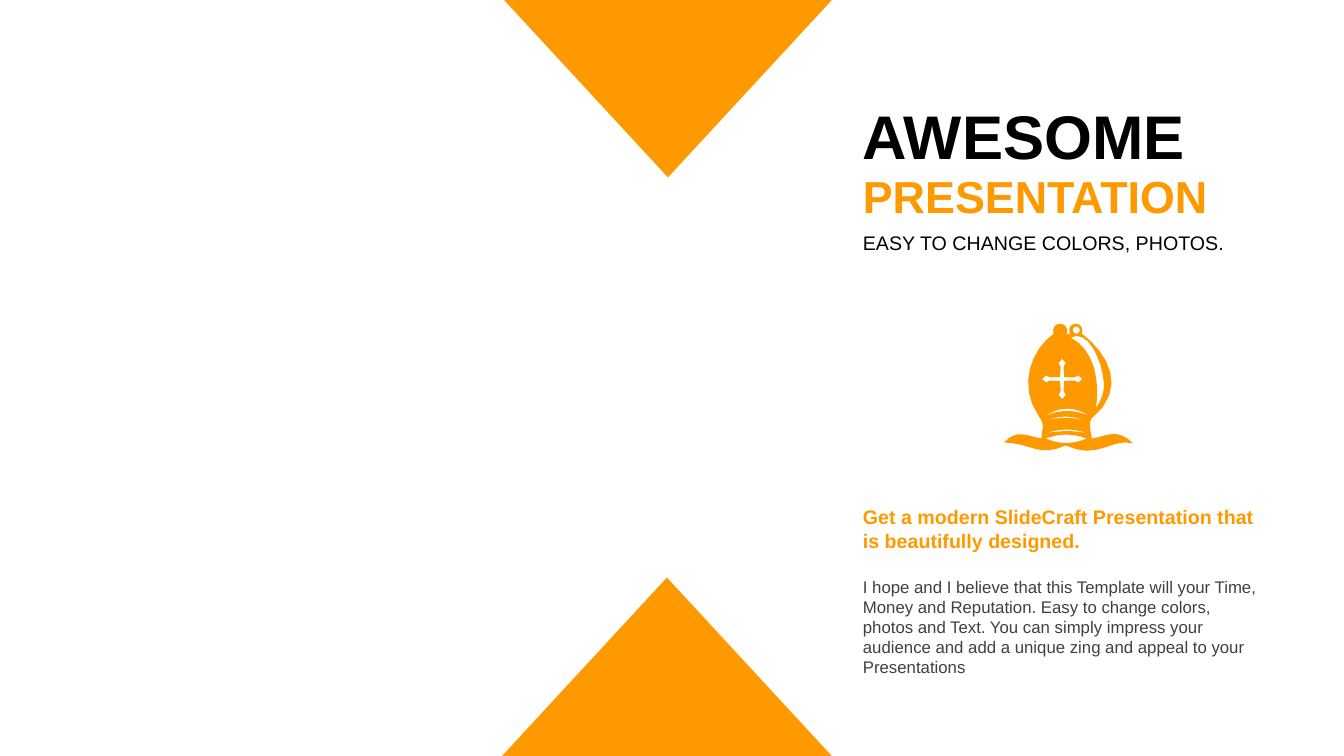
"""Build a cover slide with two triangles, a headline column and a mitre emblem."""
from math import cos, pi, sin

from pptx import Presentation
from pptx.dml.color import RGBColor
from pptx.enum.shapes import MSO_SHAPE
from pptx.enum.text import MSO_ANCHOR, MSO_AUTO_SIZE, PP_ALIGN
from pptx.util import Inches, Pt

TRIANGLE = MSO_SHAPE.ISOSCELES_TRIANGLE
TOP, MIDDLE = MSO_ANCHOR.TOP, MSO_ANCHOR.MIDDLE
LEFT, JUSTIFY = PP_ALIGN.LEFT, PP_ALIGN.JUSTIFY
FIT_SHAPE = MSO_AUTO_SIZE.SHAPE_TO_FIT_TEXT

THEME = {
    "font": "Arial",
    "accent": RGBColor(0xFE, 0x99, 0x00),
    "black": RGBColor(0x00, 0x00, 0x00),
    "grey": RGBColor(0x40, 0x40, 0x40),
    "headline": Pt(44),
    "subhead": Pt(32),
    "lead": Pt(14),
    "body": Pt(12),
}
CELL = Inches(0.01)
COLUMNS, ROWS = 1333, 750
TEXT_COLUMN, TEXT_WIDTH = 846, 428
TRIANGLE_WIDTH, TRIANGLE_HEIGHT = 327, 177
CURVE_STEPS = 8


def paint(shape):
    """Give a shape the flat accent fill."""
    shape.shadow.inherit = False
    shape.fill.solid()
    shape.fill.fore_color.rgb = THEME["accent"]
    shape.line.fill.background()


def trace(start, curves):
    """Turn a start point and its cubic curves into grid points."""
    points = [start]
    for curve in curves:
        corners = [points[-1], *curve]
        for step in range(1, CURVE_STEPS + 1):
            t = step / CURVE_STEPS
            weights = ((1 - t) ** 3, 3 * t * (1 - t) ** 2, 3 * t * t * (1 - t), t ** 3)
            points.append(tuple(
                sum(w * value for w, value in zip(weights, axis))
                for axis in zip(*corners)))
    return points


presentation = Presentation()
presentation.slide_width = COLUMNS * CELL
presentation.slide_height = ROWS * CELL
slide = presentation.slides.add_slide(presentation.slide_layouts[6])

TEXTS = [
    ("AWESOME", 92, TEXT_WIDTH, 84, "headline", "black", True, JUSTIFY, MIDDLE),
    ("PRESENTATION", 162, TEXT_WIDTH, 64, "subhead", "accent", True, JUSTIFY, MIDDLE),
    ("EASY TO CHANGE COLORS, PHOTOS.", 224, TEXT_WIDTH, 34,
     "lead", "black", False, JUSTIFY, TOP),
    ("Get a modern SlideCraft Presentation that is beautifully designed.",
     496, TEXT_WIDTH, 57, "lead", "accent", True, LEFT, TOP),
    ("I hope and I believe that this Template will your Time, Money and Reputation. "
     "Easy to change colors, photos and Text. You can simply impress your audience "
     "and add a unique zing and appeal to your Presentations",
     567, 419, 111, "body", "grey", False, LEFT, TOP),
]
for text, row, width, height, size, color, bold, alignment, anchor in TEXTS:
    text_box = slide.shapes.add_textbox(
        TEXT_COLUMN * CELL, row * CELL, width * CELL, height * CELL)
    text_frame = text_box.text_frame
    text_frame.text = text
    text_frame.word_wrap = True
    text_frame.auto_size = FIT_SHAPE
    text_frame.vertical_anchor = anchor
    paragraph = text_frame.paragraphs[0]
    paragraph.alignment = alignment
    font = paragraph.runs[0].font
    font.name, font.size, font.bold = THEME["font"], THEME[size], bold
    font.color.rgb = THEME[color]

for column, row, rotation, apex in (
    (498, ROWS - TRIANGLE_HEIGHT, 0, 0.5),
    (499, -1, 180, 0.5),
):
    triangle = slide.shapes.add_shape(
        TRIANGLE, column * CELL, row * CELL,
        TRIANGLE_WIDTH * CELL, TRIANGLE_HEIGHT * CELL)
    triangle.adjustments[0] = apex
    triangle.rotation = rotation
    paint(triangle)

silhouette = trace((996, 439), [
    [(1008, 425), (1020, 433), (1033, 435)],
    [(1033, 427), (1037, 422), (1031, 414)],
    [(1008, 382), (1024, 346), (1045, 331)],
    [(1041, 318), (1062, 318), (1058, 331)],
    [(1059, 332), (1060, 332), (1061, 331)],
    [(1057, 318), (1077, 318), (1073, 331)],
    [(1098, 350), (1120, 385), (1082, 416)],
    [(1080, 422), (1082, 430), (1083, 435)],
    [(1097, 433), (1108, 424), (1124, 440)],
    [(1102, 434), (1090, 457), (1057, 442)],
    [(1030, 454), (1024, 440), (996, 439)],
])
strap_gap = trace((1062, 335), [
    [(1078, 326), (1093, 355), (1095, 381)],
    [(1095, 390), (1092, 397), (1087, 405)],
    [(1091, 379), (1086, 347), (1062, 335)],
])
ring_hole = [
    (1067.5 + 3.5 * cos(pi * step / 8), 327.5 + 3.5 * sin(pi * step / 8))
    for step in range(16)]

cross = []
ARM = [(-2, -2), (-1.5, -12), (-3.5, -16), (0, -20), (3.5, -16), (1.5, -12)]
for quarter in range(4):
    across, down = round(cos(quarter * pi / 2)), round(sin(quarter * pi / 2))
    cross += [(1053.5 + x * across - y * down, 376 + x * down + y * across)
              for x, y in ARM]

bands = []
for left, right, row, upper, lower in (
    (1036, 1081, 413, 403, 406),
    (1038, 1076, 417.5, 412, 413.5),
    (1037, 1079, 430, 425, 427),
    (1037, 1078, 435, 430, 441),
):
    third = (right - left) / 3
    inner_left, inner_right = left + third, right - third
    bands.append(trace((left, row), [
        [(inner_left, upper), (inner_right, upper), (right, row)],
        [(inner_right, lower), (inner_left, lower), (left, row)],
    ]))

contours = [
    [(x * CELL, y * CELL) for x, y in contour]
    for contour in (silhouette, strap_gap, ring_hole, cross, *bands)]
builder = slide.shapes.build_freeform(*contours[0][0])
builder.add_line_segments(contours[0][1:])
for cutout in contours[1:]:
    builder.move_to(*cutout[0])
    builder.add_line_segments(cutout[1:])
paint(builder.convert_to_shape())

presentation.save("out.pptx")
